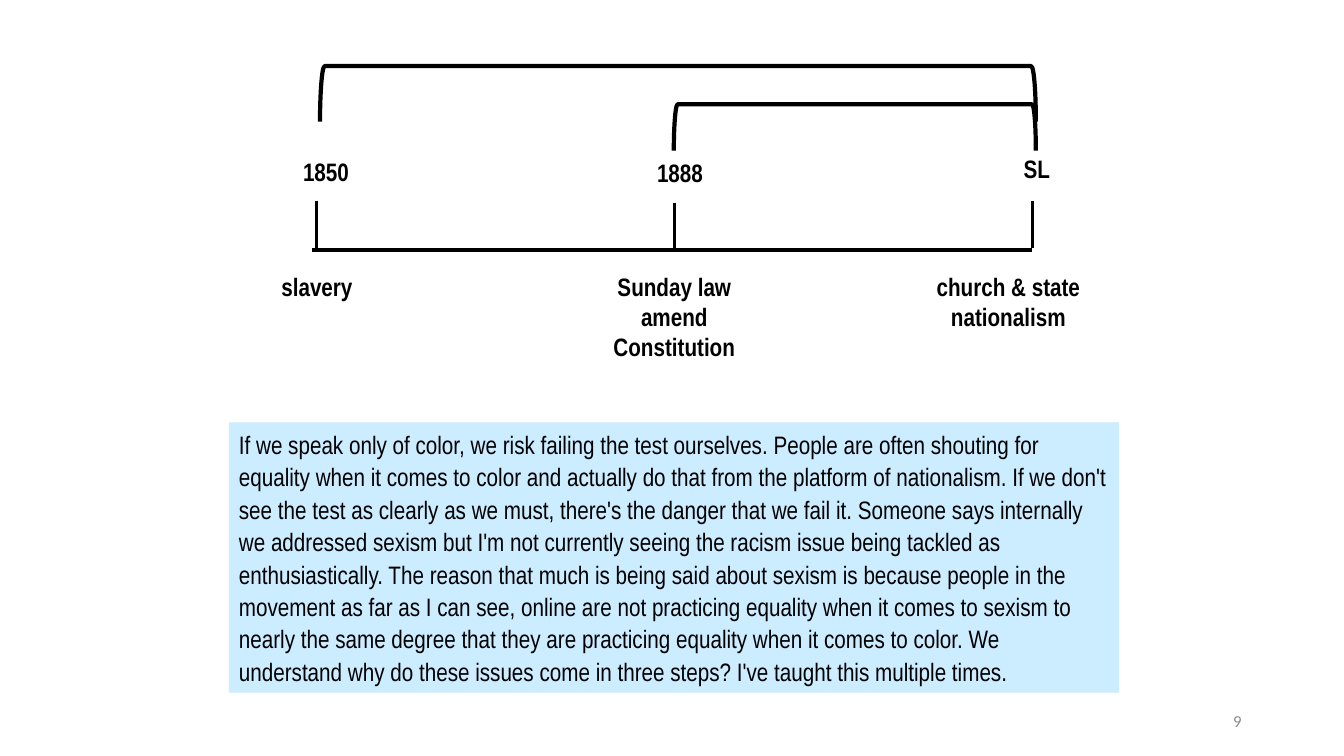
from lxml import etree
from pptx import Presentation
from pptx.dml.color import RGBColor
from pptx.enum.shapes import MSO_CONNECTOR, MSO_SHAPE
from pptx.enum.text import MSO_ANCHOR, MSO_AUTO_SIZE, PP_ALIGN
from pptx.oxml.ns import qn
from pptx.util import Pt

LEFT, CENTER, RIGHT = PP_ALIGN.LEFT, PP_ALIGN.CENTER, PP_ALIGN.RIGHT
TOP, MIDDLE = MSO_ANCHOR.TOP, MSO_ANCHOR.MIDDLE
FIT, FIXED = MSO_AUTO_SIZE.SHAPE_TO_FIT_TEXT, MSO_AUTO_SIZE.NONE
STRAIGHT = MSO_CONNECTOR.STRAIGHT
RECT, BRACKET = MSO_SHAPE.RECTANGLE, MSO_SHAPE.LEFT_BRACKET

COLORS = {"ink": "000000", "note": "CCECFF", "page": "8C8C8C"}
NARROW = "Arial Narrow"

NOTE = (
    "If we speak only of color, we risk failing the test ourselves. "
    "People are often shouting for equality when it comes to color and "
    "actually do that from the platform of nationalism. If we don't see "
    "the test as clearly as we must, there's the danger that we fail it. "
    "Someone says internally we addressed sexism but I'm not currently "
    "seeing the racism issue being tackled as enthusiastically. The reason "
    "that much is being said about sexism is because people in the movement "
    "as far as I can see, online are not practicing equality when it comes "
    "to sexism to nearly the same degree that they are practicing equality "
    "when it comes to color. We understand why do these issues come in three "
    "steps? I've taught this multiple times."
)

# label, label shift, label top, label width, tick top, caption, caption shift, caption width, caption height
MARKS = [
    ("1850", 6.8, 60.8, 69.8, 96.1, ["slavery"], 0.3, 69.8, 29),
    ("1888", 4, 61.5, 87.1, 97.5, ["Sunday law", "amend Constitution"], 0, 118.1, 72.7),
    ("SL", 3.2, 58.6, 61.2, 96.1, ["church & state", "nationalism"], -17, 153.4, 51.1),
]


def color(name):
    return RGBColor.from_string(COLORS[name])


def write(shape, lines, align=LEFT, bold=False, size=18, font=NARROW,
          ink="ink", anchor=TOP, fit=FIT, space=None):
    frame = shape.text_frame
    frame.word_wrap = True
    frame.auto_size = fit
    frame.vertical_anchor = anchor
    for i, line in enumerate(lines):
        para = frame.add_paragraph() if i else frame.paragraphs[0]
        para.alignment = align
        para.line_spacing = space
        run = para.add_run()
        run.text = line
        run.font.size = Pt(size)
        run.font.name = font
        run.font.bold = bold
        run.font.color.rgb = color(ink)


def box(slide, x, y, w, h):
    return slide.shapes.add_textbox(Pt(x), Pt(y), Pt(w), Pt(h))


def rule(slide, x1, y1, x2, y2, width):
    line = slide.shapes.add_connector(STRAIGHT, Pt(x1), Pt(y1), Pt(x2), Pt(y2))
    line.line.color.rgb = color("ink")
    line.line.width = Pt(width)
    etree.SubElement(line._element.spPr, qn("a:effectLst"))


def brace(slide, x, y, w, h):
    shape = slide.shapes.add_shape(
        BRACKET, Pt(x + (w - h) / 2), Pt(y + (h - w) / 2), Pt(h), Pt(w))
    shape.rotation = 90
    shape.shadow.inherit = False
    shape.fill.background()
    shape.line.color.rgb = color("ink")
    shape.line.width = Pt(3)


def draw_time(slide, x, y, w):
    base = y + 131.4
    gap = (w - 2.9) / (len(MARKS) - 1)
    rule(slide, x, base, x + w, base, 3)
    for i, (label, shift, top, wide, tick, lines, move, span, high) in enumerate(MARKS):
        mid = x + 2.9 + i * gap
        write(box(slide, mid + shift - wide / 2, y + top, wide, 29),
              [label], CENTER, True)
        rule(slide, mid, y + tick, mid, y + tick + 33.9, 2.25)
        write(box(slide, mid + move - span / 2, y + 142.9, span, high),
              lines, CENTER, True)
    end = x + w + 2.6
    for start, top, high in ((x + 5.4, y, 39.6), (x + 258.1, y + 27.3, 33.1)):
        brace(slide, start, top, end - start, high)


def draw_note(slide, x, y, w, h):
    shape = slide.shapes.add_shape(RECT, Pt(x), Pt(y), Pt(w), Pt(h))
    shape.shadow.inherit = False
    shape.fill.solid()
    shape.fill.fore_color.rgb = color("note")
    shape.line.fill.background()
    write(shape, [NOTE], space=1.07)


def draw_page(slide, x, y, w, h):
    write(box(slide, x, y, w, h), ["9"], RIGHT, size=12, font="Calibri",
          ink="page", anchor=MIDDLE, fit=FIXED)


def main():
    deck = Presentation()
    deck.slide_width, deck.slide_height = Pt(960), Pt(540)
    slide = deck.slides.add_slide(deck.slide_layouts[6])
    draw_note(slide, 163.6, 301.7, 635.8, 193)
    draw_page(slide, 678, 500.5, 216, 28.8)
    draw_time(slide, 223.2, 47.2, 514.1)
    deck.save("out.pptx")


if __name__ == "__main__":
    main()
